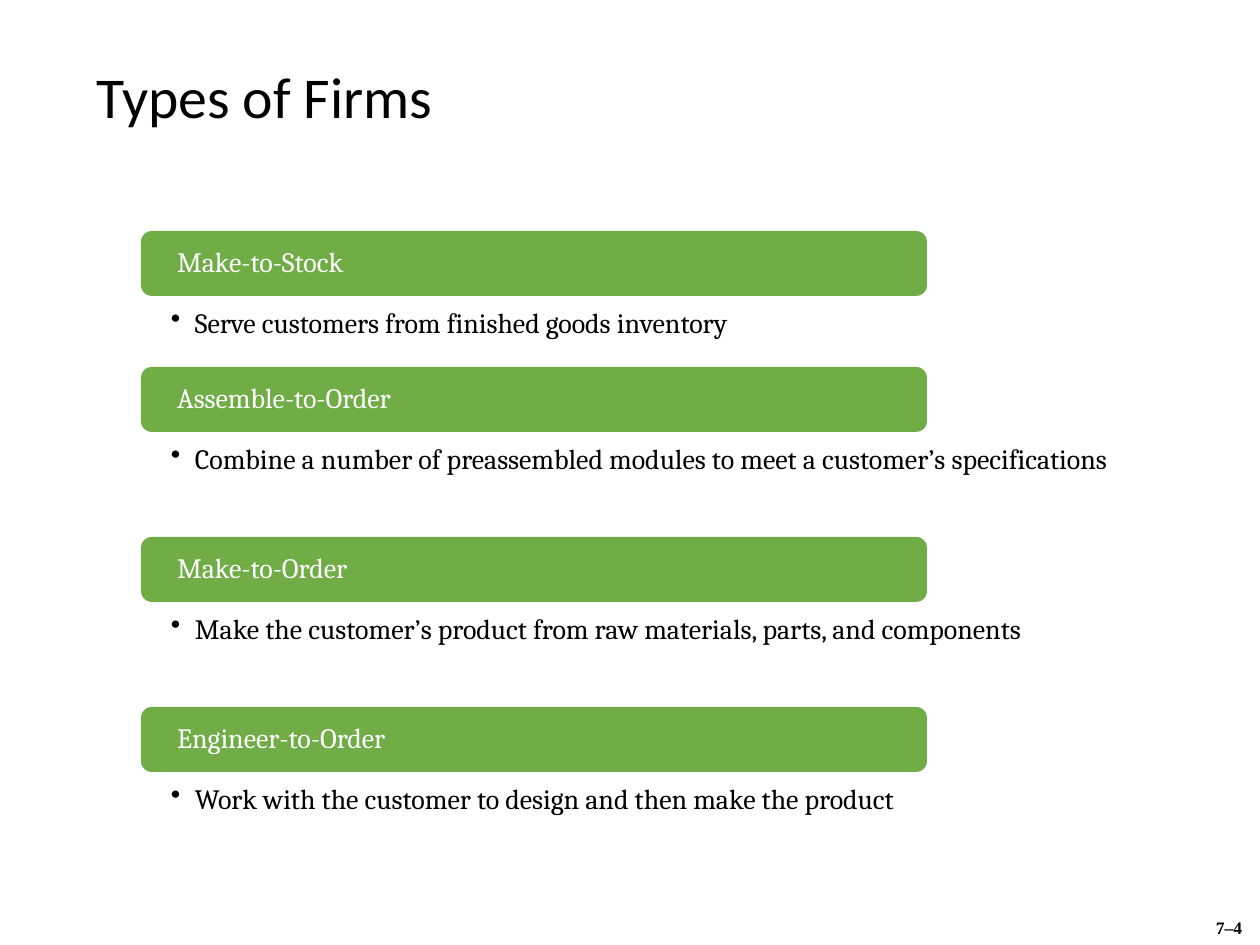
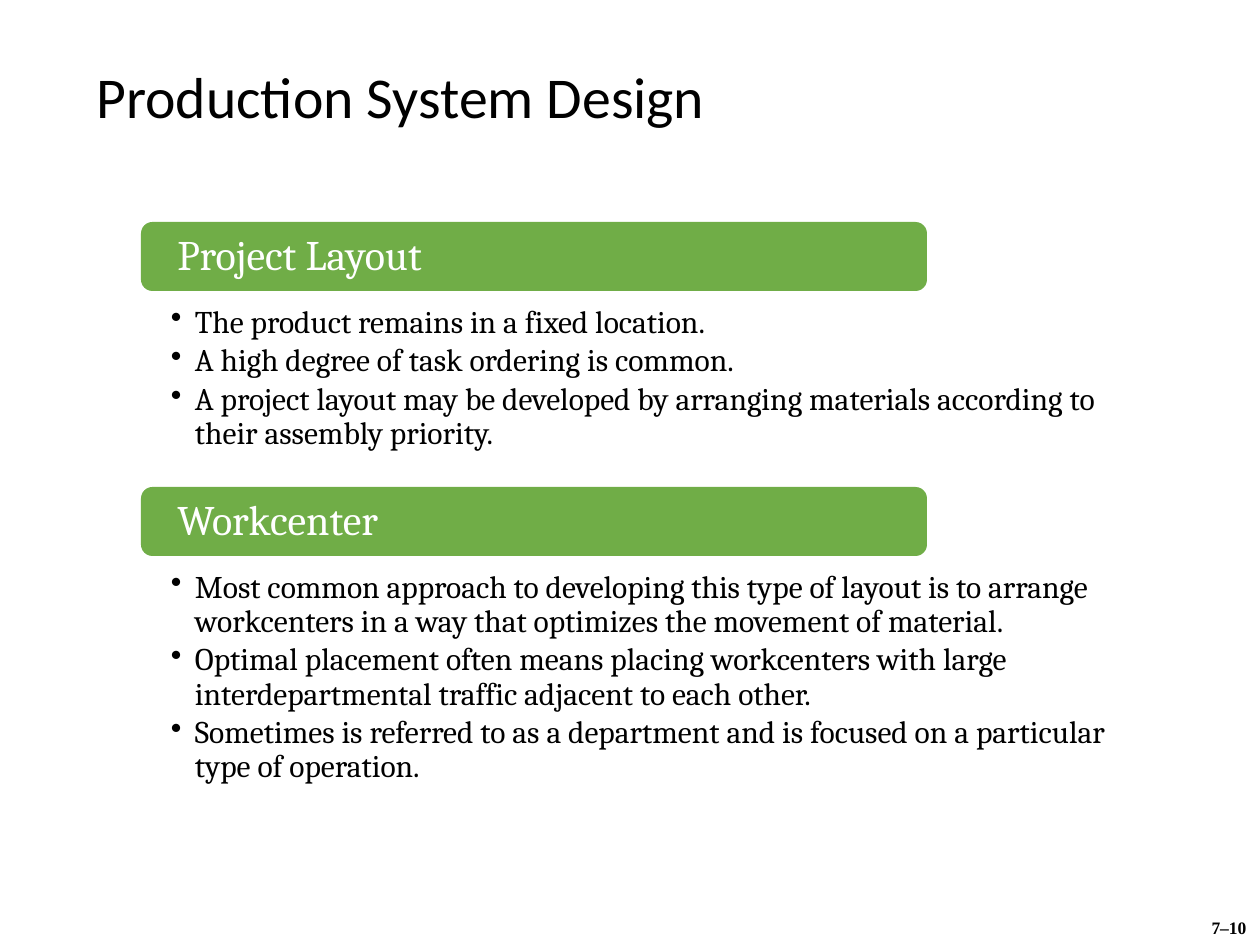
from lxml import etree
from pptx import Presentation
from pptx.dml.color import RGBColor
from pptx.enum.shapes import MSO_SHAPE
from pptx.enum.text import MSO_ANCHOR, MSO_AUTO_SIZE, PP_ALIGN
from pptx.oxml.ns import qn
from pptx.util import Emu, Pt

RECTANGLE, ROUNDED = MSO_SHAPE.RECTANGLE, MSO_SHAPE.ROUNDED_RECTANGLE
TOP, MIDDLE = MSO_ANCHOR.TOP, MSO_ANCHOR.MIDDLE
LEFT, CENTER = PP_ALIGN.LEFT, PP_ALIGN.CENTER
NO_AUTOFIT = MSO_AUTO_SIZE.NONE

PX_PER_INCH = 126
BLACK, WHITE, GREEN = "000000", "FFFFFF", "70AD47"
TITLE_FONT, TEXT_FONT, NUMBER_FONT = "Calibri", "Cambria", "Times New Roman"
TITLE_ONLY = 5

TITLE_BOX = (84, 32, 1124, 136)
NUMBER_BOX = (1197, 911, 64, 34)
BODY_LEFT, BODY_WIDTH = 84, 1124
HEADING_INDENT, HEADING_WIDTH = 57, 786
SECTION_GAP = 12
BULLET_INDENT = 24

# Each section: heading, height of its body, bullets
FIRMS = [
    ("Make-to-Stock", 91, ["Serve customers from finished goods inventory"]),
    ("Assemble-to-Order", 125,
     ["Combine a number of preassembled modules to meet a customer’s specifications"]),
    ("Make-to-Order", 125,
     ["Make the customer’s product from raw materials, parts, and components"]),
    ("Engineer-to-Order", 91,
     ["Work with the customer to design and then make the product"]),
]
LAYOUTS = [
    ("Project Layout", 218, [
        "The product remains in a fixed location.",
        "A high degree of task ordering is common.",
        "A project layout may be developed by arranging materials according to "
        "their assembly priority.",
    ]),
    ("Workcenter", 318, [
        "Most common approach to developing this type of layout is to arrange "
        "workcenters in a way that optimizes the movement of material.",
        "Optimal placement often means placing workcenters with large "
        "interdepartmental traffic adjacent to each other.",
        "Sometimes is referred to as a department and is focused on a particular "
        "type of operation.",
    ]),
]
FIRMS_STYLE = {"top": 231, "heading_height": 65, "heading_size": 16,
               "body_size": 16, "body_insets": (87, 45, 87, 15)}
LAYOUTS_STYLE = {"top": 222, "heading_height": 69, "heading_size": 24,
                 "body_size": 18, "body_insets": (87, 49, 87, 18)}


def px(length):
    return Emu(round(length * 914400 / PX_PER_INCH))


def color(value):
    return RGBColor.from_string(value)


def add_panel(page, kind, box, fill):
    panel = page.shapes.add_shape(kind, *map(px, box))
    panel.shadow.inherit = False
    panel.fill.solid()
    panel.fill.fore_color.rgb = color(fill)
    panel.line.fill.background()
    return panel


def set_frame(frame, anchor, insets):
    frame.word_wrap = True
    frame.vertical_anchor = anchor
    (frame.margin_left, frame.margin_top,
     frame.margin_right, frame.margin_bottom) = map(px, insets)


def write(para, text, font, size, ink, bold=False, align=LEFT):
    para.alignment = align
    span = para.add_run()
    span.text = text
    span.font.name = font
    span.font.size = Pt(size)
    span.font.bold = bold
    span.font.color.rgb = color(ink)


def add_bullet(para):
    para.level = 1
    properties = para._p.get_or_add_pPr()
    properties.set("marL", str(px(BULLET_INDENT)))
    properties.set("indent", str(px(-BULLET_INDENT)))
    etree.SubElement(properties, qn("a:buChar")).set("char", "•")


def add_title(page, text):
    title = page.shapes.title
    title.left, title.top, title.width, title.height = map(px, TITLE_BOX)
    frame = title.text_frame
    frame.auto_size = NO_AUTOFIT
    frame.vertical_anchor = MIDDLE
    para = frame.paragraphs[0]
    para.line_spacing = 0.9
    write(para, text, TITLE_FONT, 33, BLACK)


def add_page_number(page, text):
    frame = page.shapes.add_textbox(*map(px, NUMBER_BOX)).text_frame
    frame.word_wrap = False
    write(frame.paragraphs[0], text, NUMBER_FONT, 10, BLACK, True, CENTER)


def add_body(page, box, bullets, style):
    frame = add_panel(page, RECTANGLE, box, WHITE).text_frame
    set_frame(frame, TOP, style["body_insets"])
    size = style["body_size"]
    for index, bullet in enumerate(bullets):
        para = frame.add_paragraph() if index else frame.paragraphs[0]
        para.line_spacing = 0.9
        para.space_after = Pt(size * 0.15)
        add_bullet(para)
        write(para, bullet, TEXT_FONT, size, BLACK)


def add_heading(page, box, text, size):
    frame = add_panel(page, ROUNDED, box, GREEN).text_frame
    set_frame(frame, MIDDLE, (33, 0, 33, 0))
    para = frame.paragraphs[0]
    para.line_spacing = 0.9
    write(para, text, TEXT_FONT, size, WHITE)


def add_sections(page, sections, style):
    """Stack the sections, each heading overlapping the top of its body."""
    top, heading_height = style["top"], style["heading_height"]
    for heading, body_height, bullets in sections:
        body_top = top + (heading_height + 1) // 2
        add_body(page, (BODY_LEFT, body_top, BODY_WIDTH, body_height), bullets, style)
        add_heading(page, (BODY_LEFT + HEADING_INDENT, top, HEADING_WIDTH, heading_height),
                    heading, style["heading_size"])
        top = body_top + body_height + SECTION_GAP


def add_page(deck, title, number, sections, style):
    page = deck.slides.add_slide(deck.slide_layouts[TITLE_ONLY])
    add_page_number(page, number)
    add_title(page, title)
    add_sections(page, sections, style)


def main():
    deck = Presentation()
    deck.slide_width, deck.slide_height = px(1260), px(945)
    add_page(deck, "Types of Firms", "7–4", FIRMS, FIRMS_STYLE)
    add_page(deck, "Production System Design", "7–10", LAYOUTS, LAYOUTS_STYLE)
    deck.save("out.pptx")


if __name__ == "__main__":
    main()
